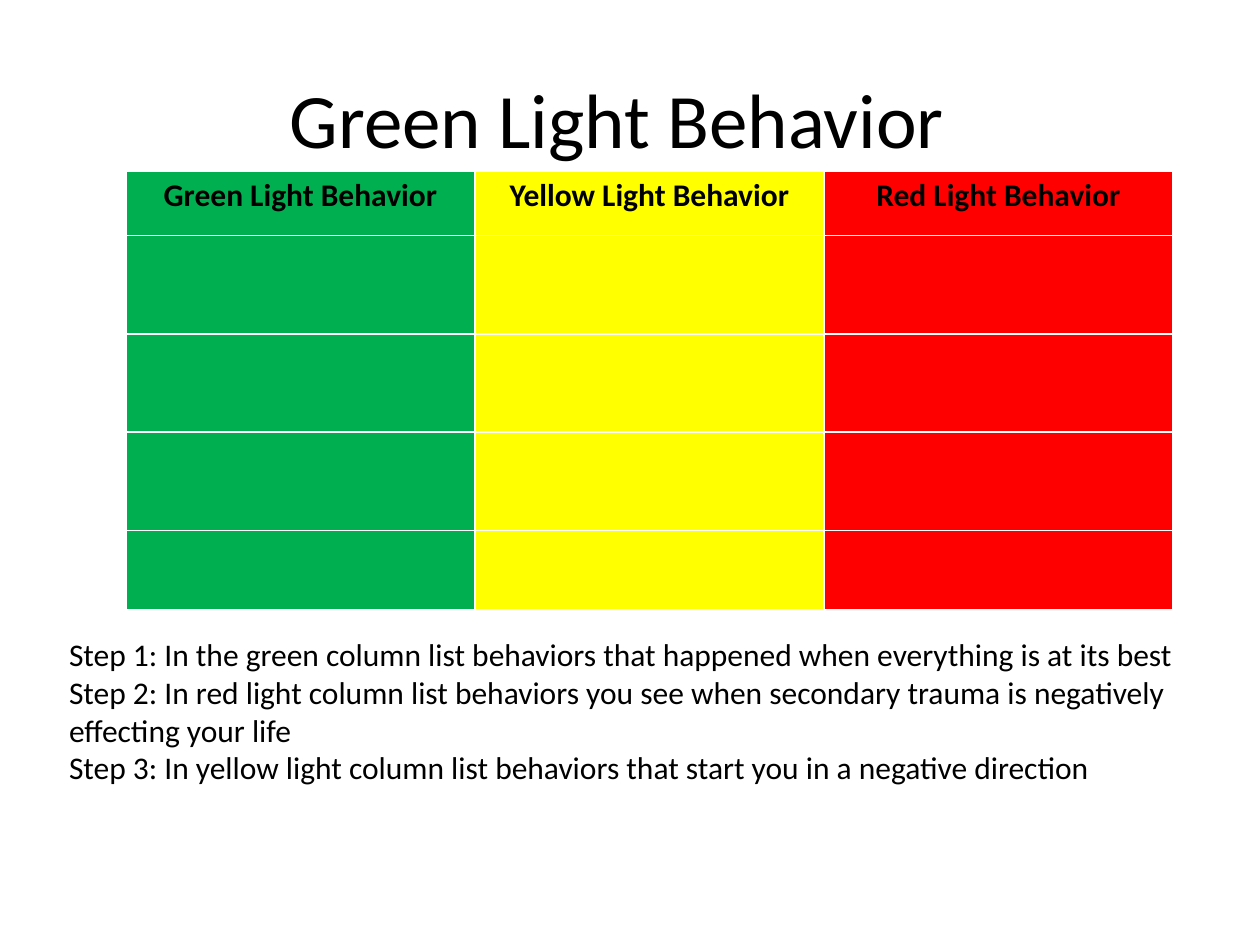
"""Build the traffic light behavior slide."""
from dataclasses import dataclass

from pptx import Presentation
from pptx.dml.color import RGBColor as RGB
from pptx.enum.text import MSO_ANCHOR as Anchor, MSO_AUTO_SIZE as Fit, PP_ALIGN as Align
from pptx.slide import Slide
from pptx.util import Inches, Pt

HUES = {"ink": "000000", "green": "00B050", "yellow": "FFFF00", "red": "FF0000"}
HEADS = {
    "green": "Green Light Behavior",
    "yellow": "Yellow Light Behavior",
    "red": "Red Light Behavior",
}
ROWS = [0.51, 0.78, 0.78, 0.78, 0.63]
STEPS = [
    "Step 1: In the green column list behaviors that happened when everything is at its best",
    "Step 2: In red light column list behaviors you see when secondary trauma"
    " is negatively effecting your life",
    "Step 3: In yellow light column list behaviors that start you in a negative direction",
]


@dataclass
class Page:
    slide: Slide
    face: str = "Calibri"
    size: int = 18

    def style(self, para, size=None, bold=False, align=Align.LEFT):
        para.alignment = align
        font = para.font
        font.name, font.size, font.bold = self.face, Pt(size or self.size), bold
        font.color.rgb = RGB.from_string(HUES["ink"])

    def title(self, text, left, top, width, height):
        shape = self.slide.shapes.title
        shape.left, shape.top = Inches(left), Inches(top)
        shape.width, shape.height = Inches(width), Inches(height)
        frame = shape.text_frame
        frame.text = text
        frame.auto_size = Fit.NONE
        frame.vertical_anchor = Anchor.TOP
        self.style(frame.paragraphs[0], size=44)

    def table(self, heads, rows, left, top, width):
        grid = self.slide.shapes.add_table(
            len(rows), len(heads), Inches(left), Inches(top), Inches(width), Inches(sum(rows))
        ).table
        for row, height in zip(grid.rows, rows):
            row.height = Inches(height)
            for cell, hue in zip(row.cells, heads):
                cell.fill.solid()
                cell.fill.fore_color.rgb = RGB.from_string(HUES[hue])
                cell.margin_left = cell.margin_right = Inches(0.07)
                cell.margin_top = cell.margin_bottom = Inches(0.04)
        for cell, text in zip(grid.rows[0].cells, heads.values()):
            cell.text = text
            self.style(cell.text_frame.paragraphs[0], bold=True, align=Align.CENTER)

    def text(self, lines, left, top, width, height):
        box = self.slide.shapes.add_textbox(
            Inches(left), Inches(top), Inches(width), Inches(height)
        )
        frame = box.text_frame
        frame.word_wrap = True
        frame.text = "\n".join(lines)
        for para in frame.paragraphs:
            self.style(para)


def main():
    deck = Presentation()
    deck.slide_width, deck.slide_height = Inches(10), Inches(7.5)
    page = Page(deck.slides.add_slide(deck.slide_layouts[5]))
    page.title("Green Light Behavior", 2.2, 0.52, 5.59, 0.84)
    page.table(HEADS, ROWS, 1, 1.36, 8.31)
    page.text(STEPS, 0.45, 4.99, 9.2, 1.31)
    deck.save("out.pptx")


if __name__ == "__main__":
    main()
